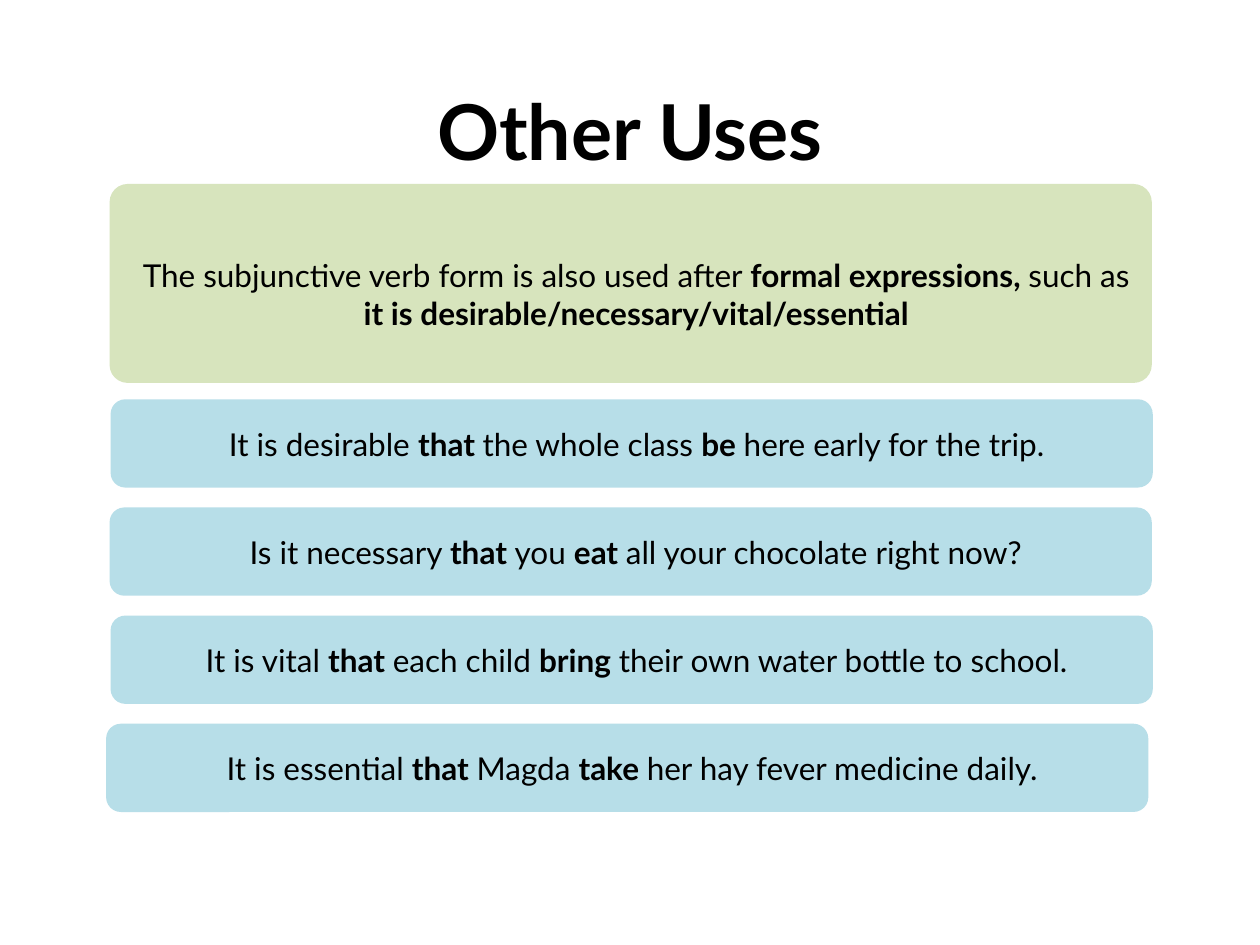
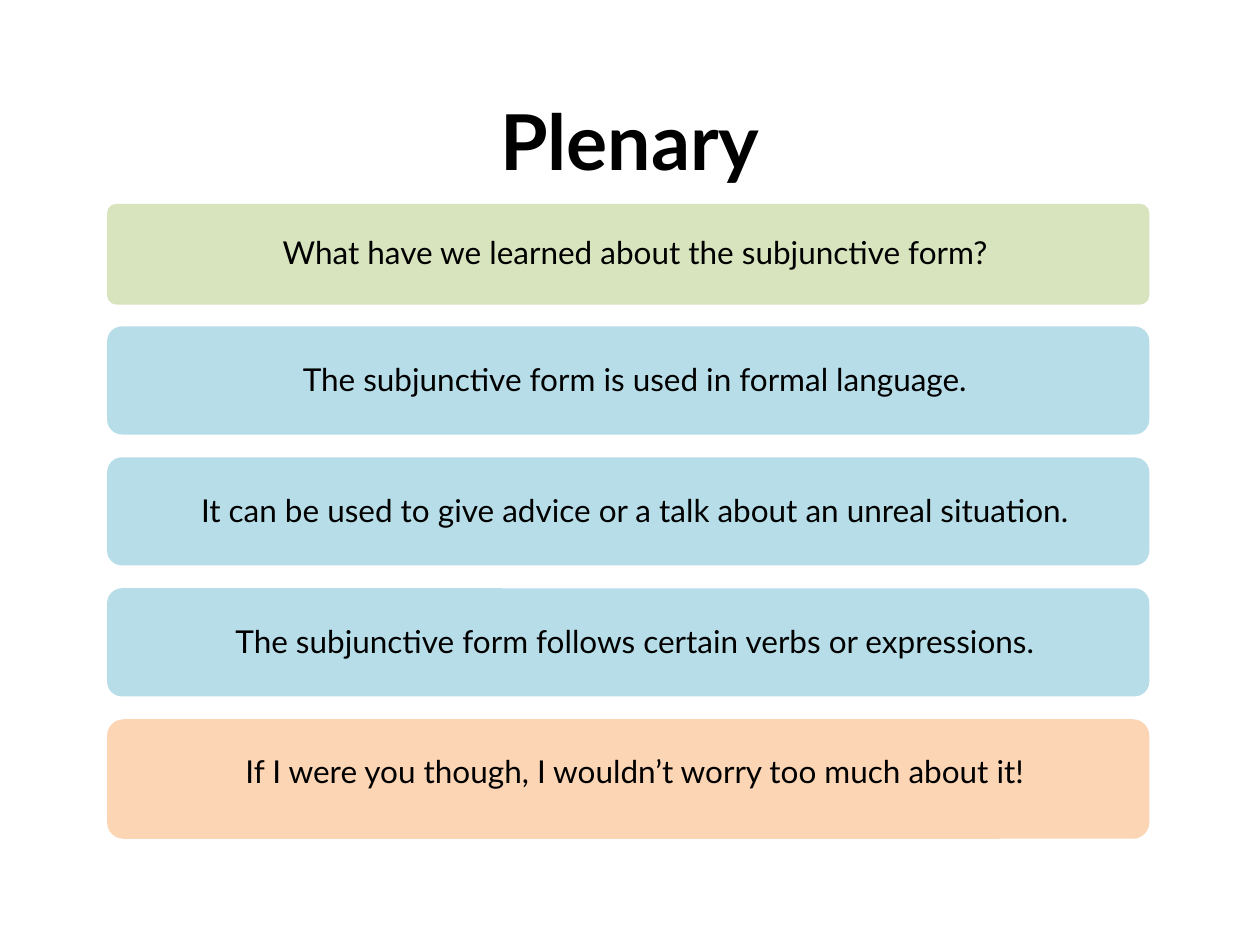
import pptx
import pptx.util
import pptx.dml.color
import pptx.enum.shapes
import pptx.enum.text
import pptx.oxml
import pptx.oxml.ns

Cm = pptx.util.Cm
Pt = pptx.util.Pt

FONT = "Lato"
BLACK = "000000"
GREEN = "D7E4BD"
BLUE = "B7DEE8"
PEACH = "FCD5B5"
CARD_WIDTH = 21.01

# Asterisks enclose bold words. Each example has its text, left edge, height and colour.
SLIDES = [
    dict(
        title="Other Uses", title_top=1.02,
        rule="The subjunctive verb form is also used after *formal expressions, *such as "
             "*it is desirable/necessary/vital/essential*",
        rule_card=(2.21, 3.71, CARD_WIDTH, 4.01), rule_box=(2.18, 5.03, 21.03, 1.4),
        first_top=8.05, pitch=2.18, rounding=0.167, text_shift=(-0.04, 0.38), text_width=21.03,
        examples=[
            ("It is desirable *that *the whole class *be *here early for the trip.", 2.23, 1.78, BLUE),
            ("Is it necessary *that *you *eat *all your chocolate right now?", 2.21, 1.78, BLUE),
            ("It is vital *that *each child *bring *their own water bottle to school.", 2.23, 1.78, BLUE),
            ("It is essential *that *Magda *take *her hay fever medicine daily.", 2.14, 1.78, BLUE),
        ],
    ),
    dict(
        title="Plenary", title_top=1.22,
        rule="What have we learned about the subjunctive form?",
        rule_card=(2.16, 4.11, CARD_WIDTH, 2.03), rule_box=(2.16, 4.57, 21.03, 1.09),
        first_top=6.58, pitch=2.64, rounding=0.137, text_shift=(0.02, 0.54), text_width=20.98,
        examples=[
            ("The subjunctive form is used in formal language.", 2.16, 2.18, BLUE),
            ("It can be used to give advice or a talk about an unreal situation.", 2.16, 2.18, BLUE),
            ("The subjunctive form follows certain verbs or expressions.", 2.16, 2.18, BLUE),
            ("If I were you though, I wouldn’t worry too much about it!", 2.16, 2.41, PEACH),
        ],
    ),
]


def write_text(shape, text, size=18, bold=False, color=BLACK, left_inset=0.51, anchor="TOP"):
    """Fill a shape with one centred paragraph; asterisks enclose bold words."""
    frame = shape.text_frame
    frame.word_wrap = True
    frame.auto_size = pptx.enum.text.MSO_AUTO_SIZE.NONE
    frame.vertical_anchor = getattr(pptx.enum.text.MSO_ANCHOR, anchor)
    frame.margin_left, frame.margin_right = Cm(left_inset), Cm(0.25)
    frame.margin_top = frame.margin_bottom = Cm(0.13)
    paragraph = frame.paragraphs[0]
    paragraph.alignment = pptx.enum.text.PP_ALIGN.CENTER
    paragraph.space_before = Pt(0)
    properties = paragraph._p.get_or_add_pPr()
    properties.set("marL", "0")
    properties.set("indent", "0")
    properties.append(pptx.oxml.parse_xml(f"<a:buNone {pptx.oxml.ns.nsdecls('a')}/>"))
    for index, part in enumerate(text.split("*")):
        if part:
            run = paragraph.add_run()
            run.text = part
            run.font.name = FONT
            run.font.size = Pt(size)
            run.font.bold = bold or index % 2 == 1
            run.font.color.rgb = pptx.dml.color.RGBColor.from_string(color)


def add_card(shapes, left, top, width, height, color, rounding):
    """Draw a borderless rounded rectangle."""
    card = shapes.add_shape(pptx.enum.shapes.MSO_SHAPE.ROUNDED_RECTANGLE,
                            Cm(left), Cm(top), Cm(width), Cm(height))
    card.adjustments[0] = rounding
    card.shadow.inherit = False
    card.fill.solid()
    card.fill.fore_color.rgb = pptx.dml.color.RGBColor.from_string(color)
    card.line.fill.background()
    return card


presentation = pptx.Presentation()
presentation.slide_width = Cm(25.4)
presentation.slide_height = Cm(19.05)

for content in SLIDES:
    slide = presentation.slides.add_slide(presentation.slide_layouts[1])

    # Title
    title = slide.shapes.title
    title.left, title.top, title.width, title.height = (
        Cm(1.27), Cm(content["title_top"]), Cm(22.86), Cm(3.18))
    write_text(title, content["title"], size=44, bold=True, left_inset=0.25, anchor="MIDDLE")

    # Rule, with its green card behind the placeholders
    rule = slide.placeholders[1]
    rule.left, rule.top, rule.width, rule.height = map(Cm, content["rule_box"])
    write_text(rule, content["rule"])
    rule_card = add_card(slide.shapes, *content["rule_card"], GREEN, 0.091)
    title.element.addprevious(rule_card.element)

    # Examples, evenly spaced down the slide
    shift_x, shift_y = content["text_shift"]
    for row, (sentence, left, height, color) in enumerate(content["examples"]):
        top = content["first_top"] + row * content["pitch"]
        group = slide.shapes.add_group_shape()
        add_card(group.shapes, left, top, CARD_WIDTH, height, color, content["rounding"])
        sentence_box = group.shapes.add_textbox(
            Cm(left + shift_x), Cm(top + shift_y), Cm(content["text_width"]), Cm(1.07))
        write_text(sentence_box, sentence)

presentation.save("out.pptx")
